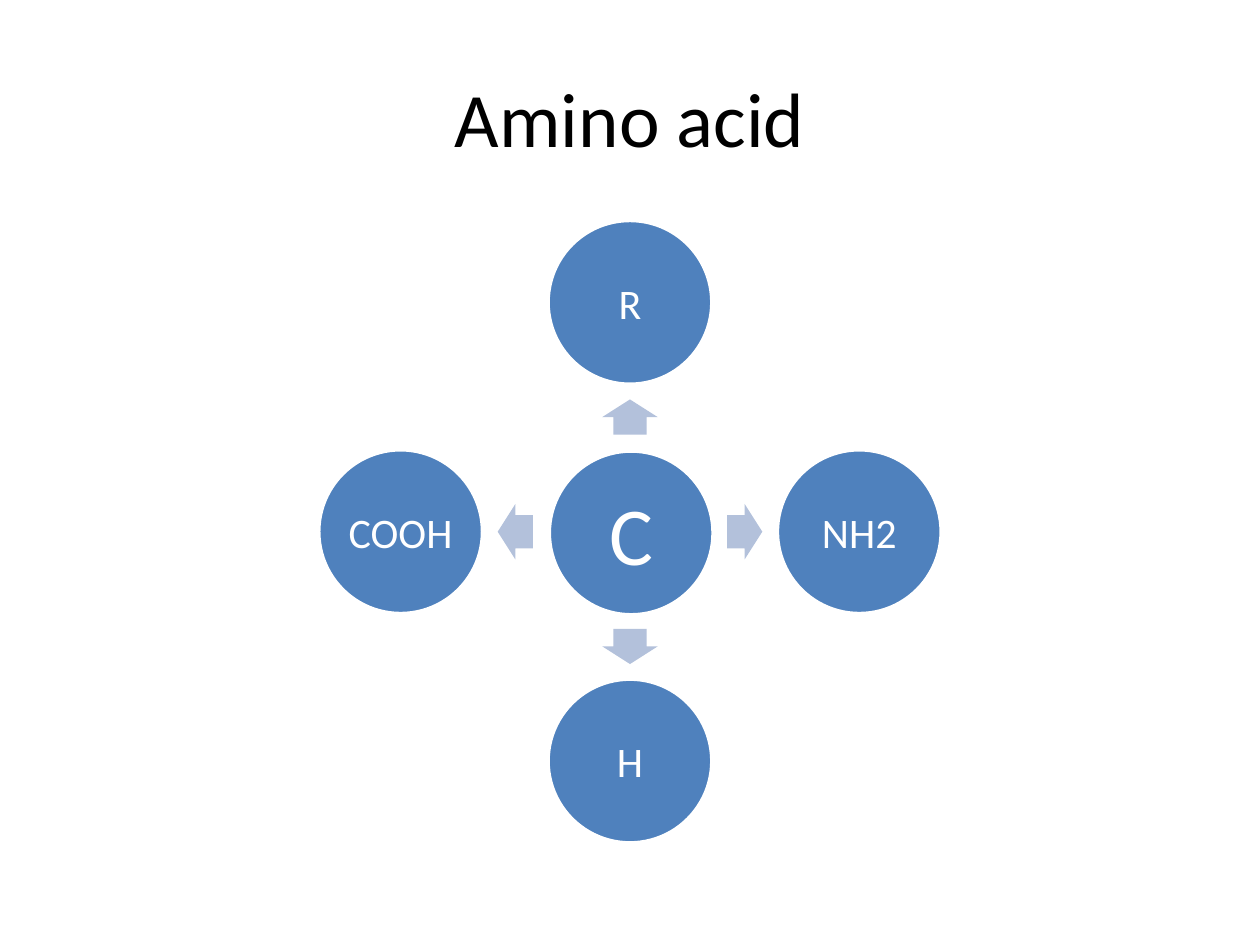
from math import cos, radians, sin

from pptx import Presentation
from pptx.dml.color import RGBColor
from pptx.enum.shapes import MSO_SHAPE as SHAPE
from pptx.enum.text import MSO_ANCHOR as ANCHOR, PP_ALIGN as ALIGN
from pptx.util import Inches, Pt

BLUE = RGBColor(0x4F, 0x81, 0xBD)
PALE_BLUE = RGBColor(0xB3, 0xC1, 0xDB)
WHITE = RGBColor(0xFF, 0xFF, 0xFF)
BLACK = RGBColor(0x00, 0x00, 0x00)
FONT = "Calibri"

CENTER_X, CENTER_Y = 5, 4.22
ORBIT = 1.82
DIAMETER = 1.3
ARROW_W, ARROW_H = 0.28, 0.44
# Group name and its direction from the carbon, in clockwise degrees
GROUPS = [("R", 270), ("NH2", 0), ("H", 90), ("COOH", 180)]


def write(tf, text, size, color):
    tf.vertical_anchor = ANCHOR.MIDDLE
    p = tf.paragraphs[0]
    p.alignment = ALIGN.CENTER
    r = p.add_run()
    r.text = text
    for name, value in {"name": FONT, "size": Pt(size)}.items():
        setattr(r.font, name, value)
    r.font.color.rgb = color


def add_title(slide, text):
    title = slide.shapes.title
    box = {"left": 0.5, "top": 0.3, "width": 9, "height": 1.25}
    for name, value in box.items():
        setattr(title, name, Inches(value))
    write(title.text_frame, text, 44, BLACK)


def add_centered(slide, kind, x, y, w, h, fill):
    """Add a filled shape whose middle is at x, y."""
    sp = slide.shapes.add_shape(
        kind, Inches(x - w / 2), Inches(y - h / 2), Inches(w), Inches(h))
    sp.shadow.inherit = False
    sp.fill.solid()
    sp.fill.fore_color.rgb = fill
    return sp


def add_circle(slide, text, x, y, size=24, inset=0.03):
    sp = add_centered(slide, SHAPE.OVAL, x, y, DIAMETER, DIAMETER, BLUE)
    sp.line.color.rgb = WHITE
    sp.line.width = Pt(2)
    tf = sp.text_frame
    for side in ("left", "top", "right", "bottom"):
        setattr(tf, f"margin_{side}", Inches(inset))
    write(tf, text, size, WHITE)


def add_arrow(slide, x, y, angle):
    sp = add_centered(slide, SHAPE.RIGHT_ARROW, x, y, ARROW_W, ARROW_H, PALE_BLUE)
    sp.line.fill.background()
    sp.adjustments[0] = 0.6
    sp.rotation = angle


def on_orbit(angle, radius):
    a = radians(angle)
    return CENTER_X + radius * cos(a), CENTER_Y + radius * sin(a)


def main():
    prs = Presentation()
    prs.slide_width, prs.slide_height = Inches(10), Inches(7.5)
    slide = prs.slides.add_slide(prs.slide_layouts[5])
    add_title(slide, "Amino acid")
    add_circle(slide, "C", CENTER_X + 0.01, CENTER_Y + 0.01, size=47, inset=0.07)
    for text, angle in GROUPS:
        add_arrow(slide, *on_orbit(angle, ORBIT / 2), angle)
        add_circle(slide, text, *on_orbit(angle, ORBIT))
    prs.save("out.pptx")


if __name__ == "__main__":
    main()
